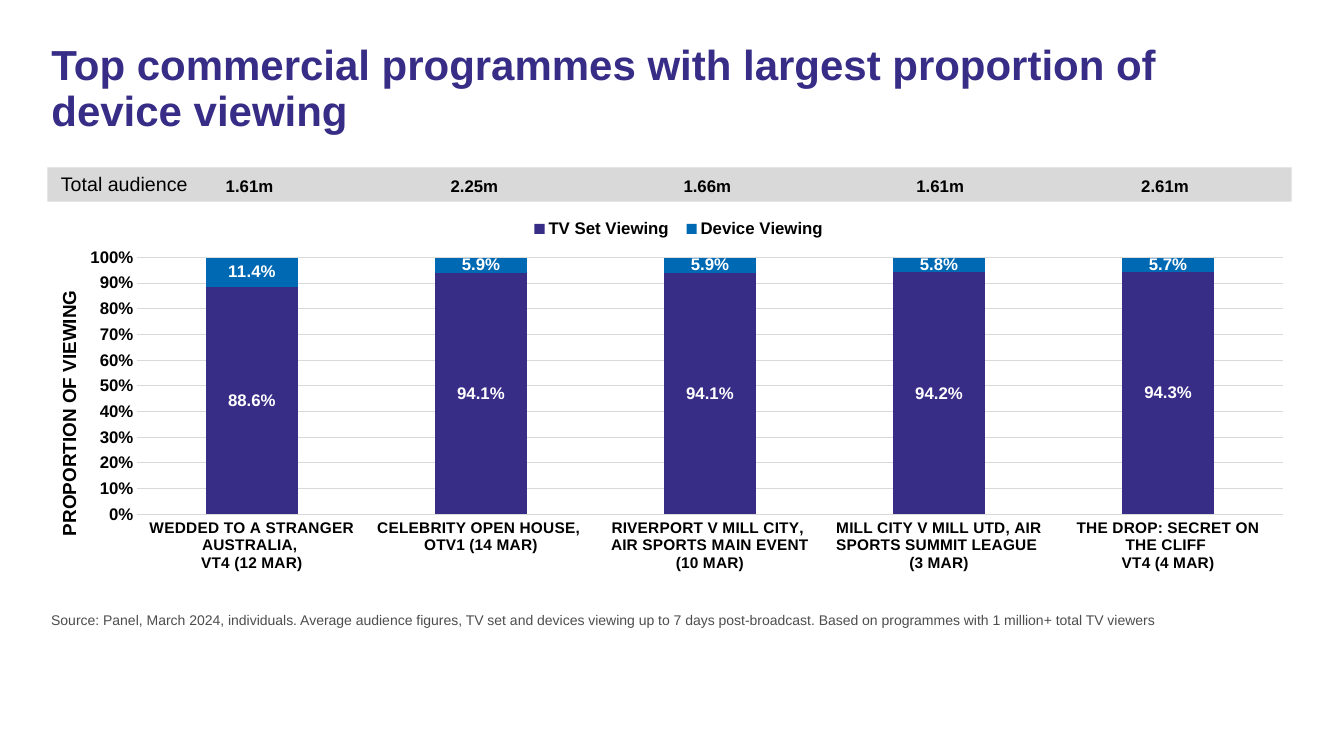
import pptx
import pptx.chart.data
import pptx.dml.color
import pptx.enum.chart
import pptx.enum.shapes
import pptx.enum.text
import pptx.util
from lxml import etree

PX = 9144  # 100 px to the inch
FONT = "Arial"
HUES = {"navy": "372D87", "blue": "0069B4", "band": "D9D9D9",
        "grey": "4D4D4D", "black": "000000", "white": "FFFFFF"}
ALIGN = pptx.enum.text.PP_ALIGN
SHOWS = [
    ("WEDDED TO A STRANGER AUSTRALIA, \nVT4 (12 MAR)", 0.886, 0.114, "1.61m", 200),
    ("CELEBRITY OPEN HOUSE, \nOTV1 (14 MAR)", 0.941, 0.059, "2.25m", 423),
    ("RIVERPORT V MILL CITY, \nAIR SPORTS MAIN EVENT\n(10 MAR)", 0.941, 0.059, "1.66m", 654),
    ("MILL CITY V MILL UTD, AIR SPORTS SUMMIT LEAGUE \n(3 MAR)", 0.942, 0.058, "1.61m", 885),
    ("THE DROP: SECRET ON THE CLIFF \nVT4 (4 MAR)", 0.943, 0.057, "2.61m", 1108),
]


def style(font, size, hue="black", bold=False):
    font.name, font.size, font.bold = FONT, pptx.util.Pt(size), bold
    font.color.rgb = pptx.dml.color.RGBColor.from_string(HUES[hue])


def write(text, box, size, hue="black", bold=False, align=ALIGN.LEFT, space=None, shape=None):
    """Put text in the given shape, or in a new text box, at box in px."""
    shape = shape or slide.shapes.add_textbox(0, 0, 0, 0)
    shape.left, shape.top, shape.width, shape.height = [n * PX for n in box]
    frame = shape.text_frame
    frame.word_wrap = True
    frame.vertical_anchor = pptx.enum.text.MSO_ANCHOR.TOP
    frame.text = text
    para = frame.paragraphs[0]
    para.alignment, para.line_spacing = align, space
    style(para.runs[0].font, size, hue, bold)


deck = pptx.Presentation()
deck.slide_width, deck.slide_height = 1333 * PX, 750 * PX
slide = deck.slides.add_slide(deck.slide_layouts[5])

band = slide.shapes.add_shape(pptx.enum.shapes.MSO_SHAPE.RECTANGLE,
                              47 * PX, 166 * PX, 1234 * PX, 34 * PX)
band.shadow.inherit = False
band.fill.solid()
band.fill.fore_color.rgb = pptx.dml.color.RGBColor.from_string(HUES["band"])
band.line.fill.background()

# Chart
data = pptx.chart.data.CategoryChartData(number_format="0.0%")
data.categories = [show[0] for show in SHOWS]
data.add_series("TV Set Viewing", [show[1] for show in SHOWS])
data.add_series("Device Viewing", [show[2] for show in SHOWS])
chart = slide.shapes.add_chart(pptx.enum.chart.XL_CHART_TYPE.COLUMN_STACKED_100,
                               47 * PX, 136 * PX, 1240 * PX, 480 * PX, data).chart
style(chart.font, 10)
chart.has_title = False

plot = chart.plots[0]
plot.gap_width, plot.overlap, plot.vary_by_categories = 150, 100, False
for bars, hue in zip(plot.series, ("navy", "blue")):
    bars.format.fill.solid()
    bars.format.fill.fore_color.rgb = pptx.dml.color.RGBColor.from_string(HUES[hue])
    tags = bars.data_labels
    tags.show_value = True
    tags.number_format, tags.number_format_is_linked = "0.0%", False
    tags.position = pptx.enum.chart.XL_LABEL_POSITION.CENTER
    style(tags.font, 12, "white", True)

shows, share = chart.category_axis, chart.value_axis
for axis, size in ((shows, 11), (share, 12)):
    axis.major_tick_mark = axis.minor_tick_mark = pptx.enum.chart.XL_TICK_MARK.NONE
    style(axis.tick_labels.font, size, bold=True)
share.minimum_scale, share.maximum_scale, share.major_unit = 0, 1, 0.1
share.tick_labels.number_format = "0%"
share.tick_labels.number_format_is_linked = False
share.format.line.fill.background()
for line in (shows.format.line, share.major_gridlines.format.line):
    line.color.rgb = pptx.dml.color.RGBColor.from_string(HUES["band"])
    line.width = pptx.util.Pt(0.75)
name = share.axis_title.text_frame
name.text = "PROPORTION OF VIEWING"
style(name.paragraphs[0].runs[0].font, 13.5, bold=True)

chart.has_legend = True
legend = chart.legend
legend.position = pptx.enum.chart.XL_LEGEND_POSITION.BOTTOM
legend.include_in_layout = False
style(legend.font, 12, bold=True)

# Fixed places within the chart, as shares of its size
C = "{http://schemas.openxmlformats.org/drawingml/2006/chart}"
area = chart._chartSpace.chart.plotArea
for part, spot in (
    (area, {"layoutTarget": "inner", "xMode": "edge", "yMode": "edge",
            "x": 0.072, "y": 0.249, "w": 0.916, "h": 0.531}),
    (legend._element, {"xMode": "edge", "yMode": "edge",
                       "x": 0.38, "y": 0.16, "w": 0.25, "h": 0.06}),
    (share.axis_title._element, {"xMode": "edge", "yMode": "edge", "x": 0.005, "y": 0.31}),
):
    for old in part.findall(C + "layout"):
        part.remove(old)
    layout = etree.Element(C + "layout")
    manual = etree.SubElement(layout, C + "manualLayout")
    for key, value in spot.items():
        etree.SubElement(manual, C + key).set("val", str(value))
    part.insert(0 if part is area else 1, layout)

# Text
write("Top commercial programmes with largest proportion of device viewing",
      (41, 39, 1240, 112), 30, "navy", True, space=0.9, shape=slide.shapes.title)
write("Source: Panel, March 2024, individuals. Average audience figures, TV set and devices "
      "viewing up to 7 days post-broadcast. Based on programmes with 1 million+ total TV viewers",
      (41, 602, 1240, 33), 10, "grey")
write("Total audience", (16, 166, 180, 34), 14, align=ALIGN.RIGHT)
for show in SHOWS:
    write(show[3], (show[4], 169, 95, 30), 12, bold=True, align=ALIGN.CENTER)

deck.save("out.pptx")
